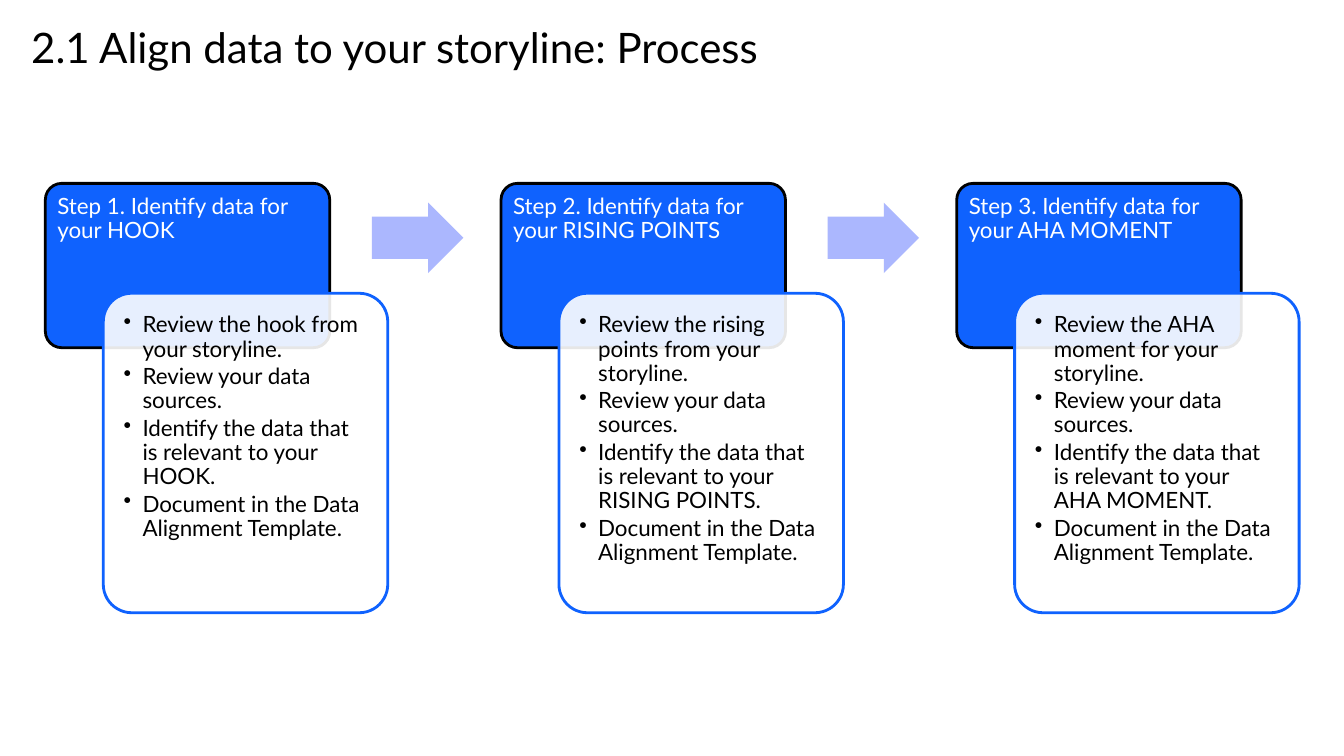
from lxml import etree
from pptx import Presentation
from pptx.dml.color import RGBColor
from pptx.enum.shapes import MSO_SHAPE
from pptx.enum.text import MSO_ANCHOR, PP_ALIGN
from pptx.oxml.ns import qn
from pptx.util import Pt

ROUNDED = MSO_SHAPE.ROUNDED_RECTANGLE
ARROW = MSO_SHAPE.RIGHT_ARROW
TOP = MSO_ANCHOR.TOP
LEFT = PP_ALIGN.LEFT

FONT = "Lato"
BLACK, WHITE, BLUE, LILAC = "000000", "FFFFFF", "0F62FE", "ABB7FE"

# Horizontal layout of the three steps
FIRST_LEFT, STEP_PITCH, BOX_WIDTH = 32.4, 325.5, 203.2
CARD_OFFSET, ARROW_OFFSET = 41.4, 233.3

# Heading, and what differs between the steps: first bullet and subject
STEPS = [
    ("Review the hook from your storyline.", "HOOK"),
    ("Review the rising points from your storyline.", "RISING POINTS"),
    ("Review the AHA moment for your storyline.", "AHA MOMENT"),
]


def colour(value):
    return RGBColor.from_string(value)


def add_block(page, kind, left, top, width, height, fill, line=None):
    block = page.shapes.add_shape(kind, Pt(left), Pt(top), Pt(width), Pt(height))
    block.shadow.inherit = False
    block.fill.solid()
    block.fill.fore_color.rgb = colour(fill)
    if line:
        block.line.color.rgb = colour(line)
        block.line.width = Pt(2)
    else:
        block.line.fill.background()
    return block


def set_opacity(block, percent):
    tint = block.fill._xPr.find(qn("a:solidFill"))[0]
    etree.SubElement(tint, qn("a:alpha"), val=str(percent * 1000))


def add_bullet(para, indent):
    properties = para._p.get_or_add_pPr()
    properties.set("marL", str(Pt(indent)))
    properties.set("indent", str(-Pt(indent)))
    etree.SubElement(properties, qn("a:buChar"), char="•")


def write(box, lines, size, text_colour, inset_x, inset_y, bulleted=False):
    frame = box.text_frame
    frame.word_wrap = True
    frame.vertical_anchor = TOP
    frame.margin_left = frame.margin_right = Pt(inset_x)
    frame.margin_top = frame.margin_bottom = Pt(inset_y)
    frame.text = "\n".join(lines)
    for para in frame.paragraphs:
        if bulleted:
            add_bullet(para, 13.5)
            para.space_after = Pt(2.4)
        para.alignment = LEFT
        para.line_spacing = 0.9
        for span in para.runs:
            span.font.name = FONT
            span.font.size = Pt(size)
            span.font.color.rgb = colour(text_colour)


def add_title(page, text):
    box = page.shapes.add_textbox(Pt(22.3), Pt(15.1), Pt(798.5), Pt(59.8))
    write(box, [text], 30, BLACK, 0, 0)
    box.text_frame.paragraphs[0].line_spacing = 1.0


def add_step(page, left, number, review, subject):
    # Blue heading box
    heading = add_block(page, ROUNDED, left, 131, BOX_WIDTH, 117.4, BLUE, BLACK)
    heading.adjustments[0] = 0.1
    write(heading, [f"Step {number}. Identify data for your {subject}"],
          16, WHITE, 5.2, 5.2)

    # Translucent card with the tasks
    card = add_block(page, ROUNDED, left + CARD_OFFSET, 209.5,
                     BOX_WIDTH, 228.2, WHITE, BLUE)
    card.adjustments[0] = 0.1
    set_opacity(card, 90)
    tasks = [
        review,
        "Review your data sources.",
        f"Identify the data that is relevant to your {subject}.",
        "Document in the Data Alignment Template.",
    ]
    write(card, tasks, 16, BLACK, 8.6, 8.6, bulleted=True)


def add_arrow(page, left):
    arrow = add_block(page, ARROW, left, 144.7, 65.3, 50.4, LILAC)
    arrow.adjustments[0] = 0.6
    arrow.adjustments[1] = 0.5


def main():
    deck = Presentation()
    deck.slide_width, deck.slide_height = Pt(960), Pt(540)
    page = deck.slides.add_slide(deck.slide_layouts[6])

    add_title(page, "2.1 Align data to your storyline: Process")
    for index, (review, subject) in enumerate(STEPS):
        left = FIRST_LEFT + index * STEP_PITCH
        add_step(page, left, index + 1, review, subject)
        if index < len(STEPS) - 1:
            add_arrow(page, left + ARROW_OFFSET)

    deck.save("out.pptx")


if __name__ == "__main__":
    main()
